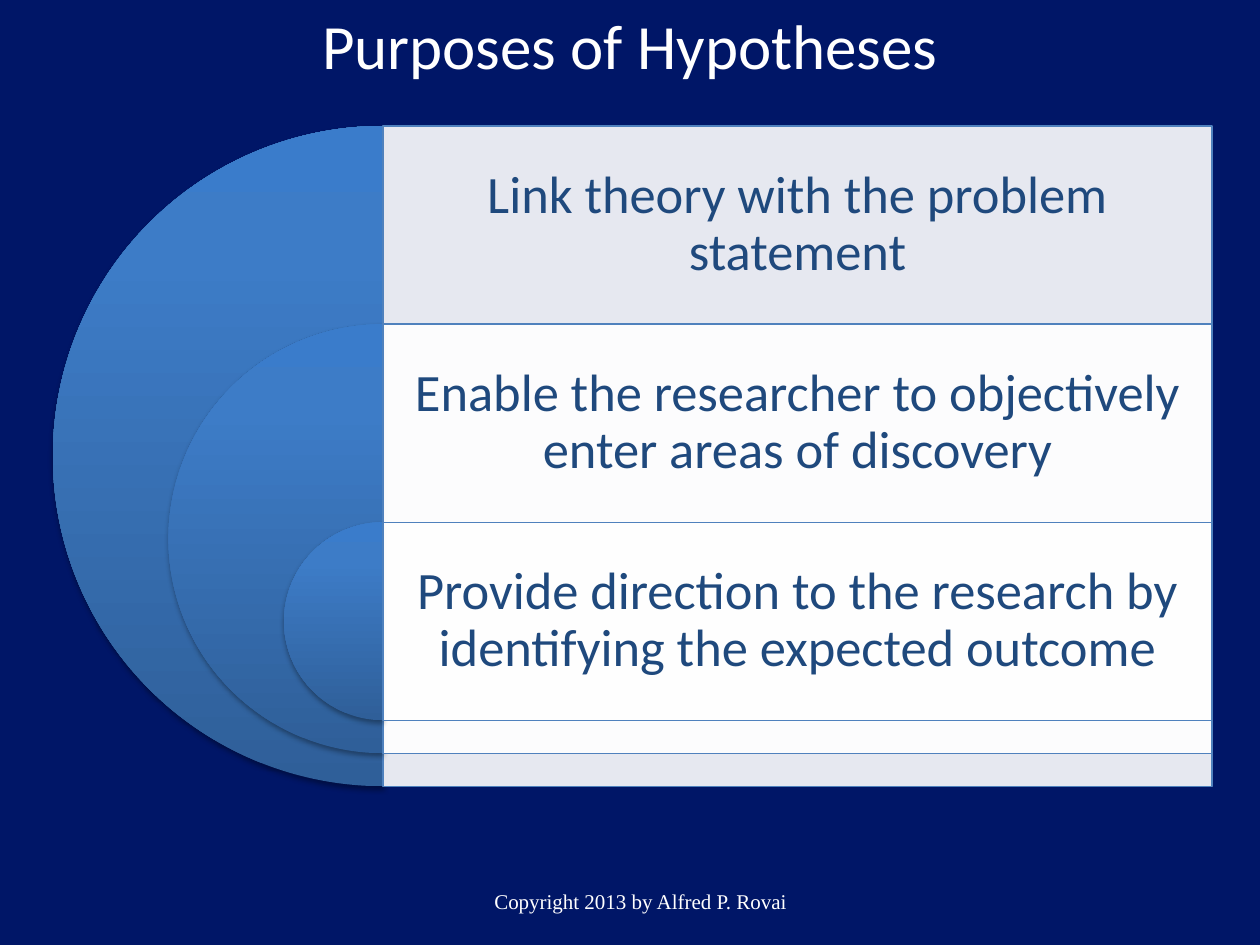
from dataclasses import dataclass

from pptx import Presentation
from pptx.dml.color import RGBColor
from pptx.enum.shapes import MSO_SHAPE
from pptx.enum.text import MSO_ANCHOR, MSO_AUTO_SIZE, PP_ALIGN
from pptx.oxml import parse_xml
from pptx.oxml.ns import nsdecls, qn
from pptx.slide import Slide
from pptx.text.text import TextFrame
from pptx.util import Inches, Pt

PIE, RECT = MSO_SHAPE.PIE, MSO_SHAPE.RECTANGLE
TOP, MIDDLE = MSO_ANCHOR.TOP, MSO_ANCHOR.MIDDLE
CENTER = PP_ALIGN.CENTER
GROW = MSO_AUTO_SIZE.SHAPE_TO_FIT_TEXT

NAVY = RGBColor(0x00, 0x16, 0x67)
WHITE = RGBColor(0xFF, 0xFF, 0xFF)
BLUE = RGBColor(0x4F, 0x81, 0xBD)
DARK_BLUE = RGBColor(0x1F, 0x49, 0x7D)
PIE_STOPS = (
    (0, RGBColor(0x2F, 0x5F, 0x99)),
    (80, RGBColor(0x3D, 0x7C, 0xC7)),
    (100, RGBColor(0x3A, 0x7C, 0xCB)),
)

WIDTH, HEIGHT = Inches(10), Inches(7.5)

# The diagram: panels share a left edge, which is also the pies' centre line
AXIS = 0.304 * WIDTH
PANEL_WIDTH = 0.658 * WIDTH
DIAGRAM_TOP = HEIGHT / 7.5
DIAGRAM_SIZE = 0.524 * WIDTH
BAND = 0.30 * DIAGRAM_SIZE  # height of one purpose
RIM = 0.05 * DIAGRAM_SIZE   # step between the lower edges


@dataclass
class Box:
    left: float
    top: float
    width: float
    height: float

    def emu(self) -> tuple[int, ...]:
        return tuple(round(v) for v in
                     (self.left, self.top, self.width, self.height))


@dataclass
class Purpose:
    level: int
    text: str

    @property
    def top(self) -> float:
        return DIAGRAM_TOP + self.level * BAND

    @property
    def size(self) -> float:
        return DIAGRAM_SIZE - self.level * (BAND + RIM)


PURPOSES = [Purpose(i, text) for i, text in enumerate((
    "Link theory with the problem statement",
    "Enable the researcher to objectively enter areas of discovery",
    "Provide direction to the research by identifying the expected outcome",
))]


def write(tf: TextFrame, text: str, size: float, font: str,
          color: RGBColor, anchor: MSO_ANCHOR) -> None:
    tf.word_wrap = True
    tf.vertical_anchor = anchor
    p = tf.paragraphs[0]
    p.alignment = CENTER
    r = p.add_run()
    r.text = text
    r.font.size = Pt(size)
    r.font.name = font
    r.font.color.rgb = color


def add_pie(s: Slide, purpose: Purpose) -> None:
    size = purpose.size
    box = Box(AXIS - size / 2, purpose.top, size, size)
    sp = s.shapes.add_shape(PIE, *box.emu())
    sp.adjustments[0], sp.adjustments[1] = 54, 162  # 90 to 270 degrees
    stops = "".join(
        f'<a:gs pos="{pos * 1000}"><a:srgbClr val="{color}"/></a:gs>'
        for pos, color in PIE_STOPS)
    sp_pr = sp._element.spPr
    sp_pr.append(parse_xml(
        f'<a:gradFill {nsdecls("a")} rotWithShape="1"><a:gsLst>{stops}</a:gsLst>'
        '<a:lin ang="16200000" scaled="0"/></a:gradFill>'))
    sp.line.fill.background()
    # Soft shadow just below the pie
    sp.shadow.inherit = False
    sp_pr.find(qn("a:effectLst")).append(parse_xml(
        f'<a:outerShdw {nsdecls("a")} blurRad="{Pt(3.1)}" dist="{Pt(1.8)}" '
        'dir="5400000" rotWithShape="0"><a:srgbClr val="000000">'
        '<a:alpha val="35000"/></a:srgbClr></a:outerShdw>'))


def add_panel(s: Slide, purpose: Purpose) -> None:
    box = Box(AXIS, purpose.top, PANEL_WIDTH, purpose.size)
    sp = s.shapes.add_shape(RECT, *box.emu())
    sp.shadow.inherit = False
    sp.fill.solid()
    sp.fill.fore_color.rgb = WHITE
    color = sp._element.spPr.find(qn("a:solidFill")).find(qn("a:srgbClr"))
    color.append(parse_xml(f'<a:alpha {nsdecls("a")} val="90000"/>'))
    sp.line.color.rgb = BLUE
    sp.line.width = Pt(0.75)


def add_label(s: Slide, purpose: Purpose) -> None:
    box = Box(AXIS, purpose.top, PANEL_WIDTH, BAND)
    tf = s.shapes.add_textbox(*box.emu()).text_frame
    tf.margin_left = tf.margin_right = Inches(0.12)
    tf.margin_top = tf.margin_bottom = Inches(0.12)
    write(tf, purpose.text, 30, "Calibri", DARK_BLUE, MIDDLE)
    p = tf.paragraphs[0]
    p.line_spacing = 0.9
    p.space_after = Pt(10.5)


def main() -> None:
    prs = Presentation()
    prs.slide_width, prs.slide_height = WIDTH, HEIGHT
    s = prs.slides.add_slide(prs.slide_layouts[5])
    s.background.fill.solid()
    s.background.fill.fore_color.rgb = NAVY

    # Title
    title = s.shapes.title
    box = Box(0.075 * WIDTH, 0, 0.85 * WIDTH, 0.095 * HEIGHT)
    title.left, title.top, title.width, title.height = box.emu()
    write(title.text_frame, "Purposes of Hypotheses", 36, "Calibri", WHITE, TOP)
    title.text_frame.auto_size = GROW

    # Copyright line
    box = Box(0.175 * WIDTH, 0.927 * HEIGHT, 0.667 * WIDTH, 0.053 * HEIGHT)
    footer = s.shapes.add_textbox(*box.emu())
    write(footer.text_frame, "Copyright 2013 by Alfred P. Rovai", 12,
          "Times New Roman", WHITE, MIDDLE)

    # Nested purposes, from the outside in
    for purpose in PURPOSES:
        add_pie(s, purpose)
        add_panel(s, purpose)
        add_label(s, purpose)

    prs.save("out.pptx")


if __name__ == "__main__":
    main()
